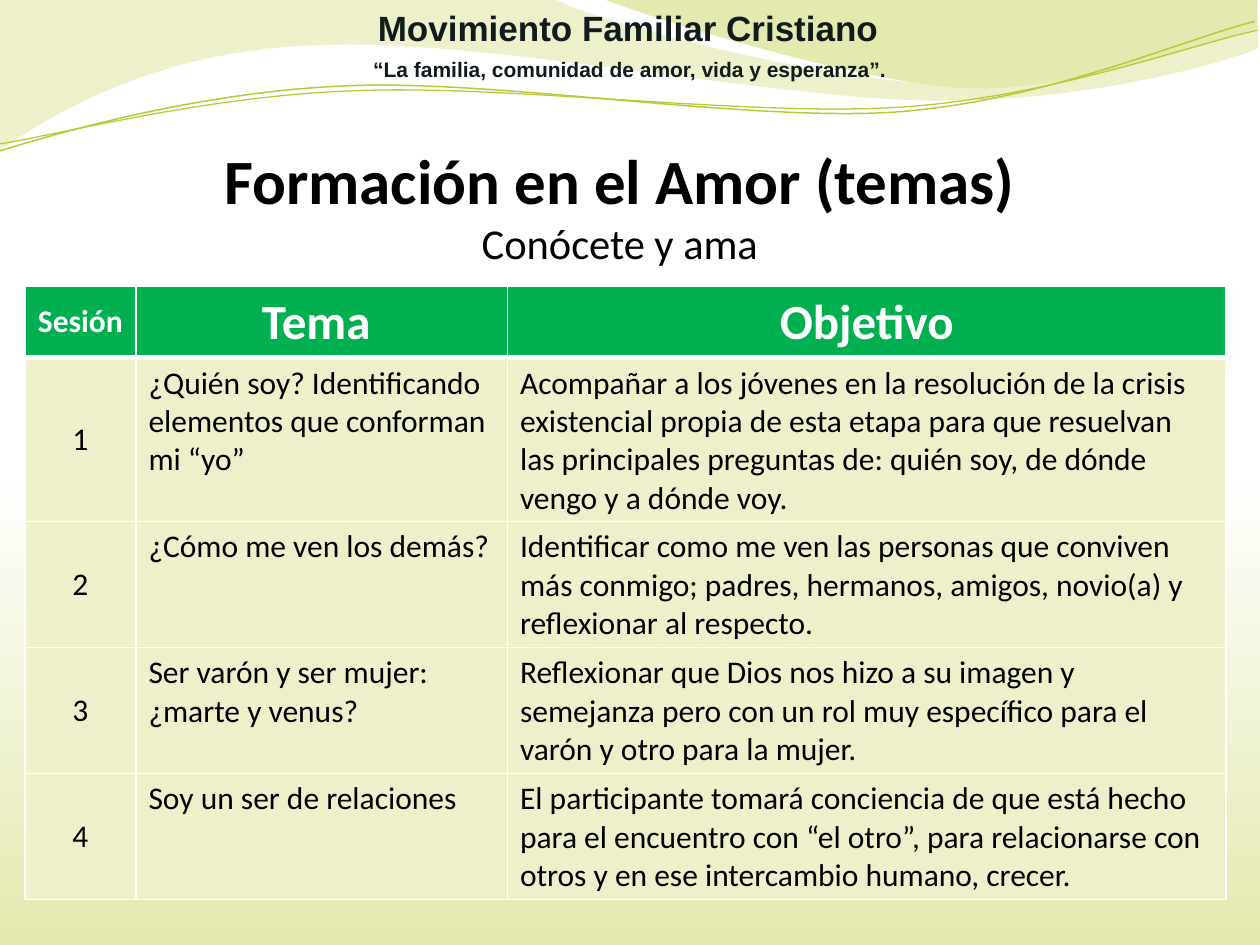
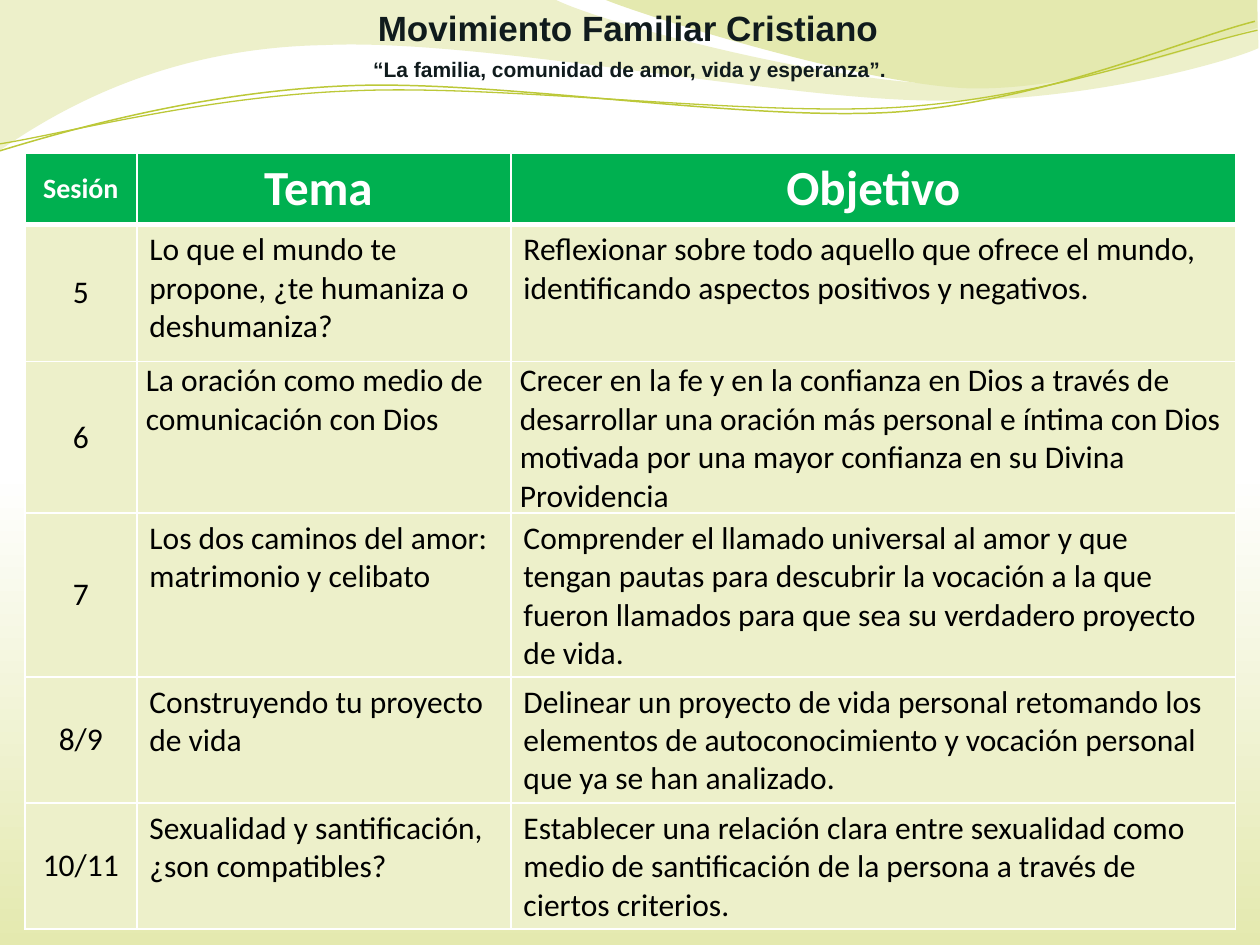
from dataclasses import dataclass

from lxml import etree
from pptx import Presentation
from pptx.dml.color import RGBColor
from pptx.enum.shapes import MSO_SHAPE
from pptx.enum.text import MSO_ANCHOR, PP_ALIGN
from pptx.oxml.ns import qn
from pptx.util import Cm, Pt

RECT = MSO_SHAPE.RECTANGLE
CENTER, LEFT = PP_ALIGN.CENTER, PP_ALIGN.LEFT
MIDDLE, TOP = MSO_ANCHOR.MIDDLE, MSO_ANCHOR.TOP

WHITE, BLACK, INK = "FFFFFF", "000000", "101B1D"
GREEN, PALE, LIME, OLIVE = "00B050", "EDF0CA", "E4E9AF", "BCC838"
BODY_FONT, BANNER_FONT = "Calibri", "Arial"
PAGE_WIDTH, PAGE_HEIGHT = 25.4, 19.05

Point = tuple[float, float]


@dataclass(frozen=True)
class Wave:
    """Outline in cm: a segment of one point is a line, of three a Bézier curve."""
    start: Point
    segments: list[tuple[Point, ...]]
    fill: str | None = None
    line_width: float = 0


@dataclass(frozen=True)
class Banner:
    text: str
    left: float
    top: float
    width: float
    height: float
    size: float
    wrap: bool


@dataclass(frozen=True)
class Session:
    number: str
    topic: str
    goal: str
    tight: bool = False


@dataclass(frozen=True)
class Program:
    top: float
    height: float
    columns: list[float]
    rows: list[float]
    session_size: float
    sessions: list[Session]


WAVES = [
    Wave((0, 0), [
        ((11.15, -0.03),),
        ((12.07, 0.46), (16.81, 1.7), (19.23, 1.7)),
        ((21.62, 1.7), (24.28, 0.69), (25.35, 0.23)),
        ((25.37, 0.97),),
        ((24.92, 1.19), (22.05, 2.06), (18.9, 2.03)),
        ((15.77, 2.03), (9.68, 0.76), (6.53, 0.91)),
        ((3.28, 0.97), (1.14, 2.24), (-0.03, 3.05)),
    ], fill=PALE),
    Wave((12.14, -0.03), [
        ((12.9, 0.3), (17.3, 1.68), (19.48, 1.78)),
        ((21.69, 1.85), (24.38, 0.86), (25.35, 0.56)),
        ((25.35, 0),),
    ], fill=LIME),
    Wave((-0.03, 3.05), [
        ((1.22, 2.67), (3.99, 1.85), (7.01, 1.73)),
        ((10.03, 1.6), (15.01, 2.46), (18.06, 2.26)),
        ((21.11, 2.03), (23.8, 0.81), (25.3, 0.43)),
    ], line_width=0.85),
    Wave((0, 2.9), [
        ((1.19, 2.72), (4.14, 1.93), (7.16, 1.83)),
        ((10.21, 1.7), (15.14, 2.36), (18.16, 2.16)),
        ((21.18, 1.96), (23.85, 0.94), (25.35, 0.61)),
    ], line_width=0.75),
]

BANNERS = [
    Banner("Movimiento Familiar Cristiano", 7.33, 0, 10.67, 1.12, 20, False),
    Banner("“La familia, comunidad de amor, vida y esperanza”.",
           4.65, 1.02, 16.1, 0.76, 12, True),
]

HEADINGS = ["Sesión", "Tema ", "Objetivo"]

FIRST_SESSIONS = Program(5.77, 12.55, [2.24, 7.49, 14.48], [1.04] * 5, 18, [
    Session("1", "¿Quién soy? Identificando elementos que conforman mi “yo”",
            "Acompañar a los jóvenes en la resolución de la crisis existencial propia "
            "de esta etapa para que resuelvan las principales preguntas de: quién soy, "
            "de dónde vengo y a dónde voy."),
    Session("2", "¿Cómo me ven los demás?",
            "Identificar como me ven las personas que conviven más conmigo; padres, "
            "hermanos, amigos, novio(a) y reflexionar al respecto."),
    Session("3", "Ser varón y ser mujer: ¿marte y venus?",
            "Reflexionar que Dios nos hizo a su imagen y semejanza pero con un rol muy "
            "específico para el varón y otro para la mujer."),
    Session("4", "Soy un ser de relaciones",
            "El participante tomará conciencia de que está hecho para el encuentro con "
            "“el otro”, para relacionarse con otros y en ese intercambio humano, crecer."),
])

LAST_SESSIONS = Program(3.08, 15.65, [2.26, 7.54, 14.61],
                        [0.99, 2.77, 2.59, 3, 2.18, 2.18], 16, [
    Session("5", "Lo que el mundo te propone, ¿te humaniza o deshumaniza?",
            "Reflexionar sobre todo aquello que ofrece el mundo, identificando aspectos "
            "positivos y negativos."),
    Session("6", "La oración como medio de comunicación con Dios",
            "Crecer en la fe y en la confianza en Dios a través de desarrollar una "
            "oración más personal e íntima con Dios motivada por una mayor confianza "
            "en su Divina Providencia", tight=True),
    Session("7", "Los dos caminos del amor: matrimonio y celibato",
            "Comprender el llamado universal al amor y que tengan pautas para descubrir "
            "la vocación a la que fueron llamados para que sea su verdadero proyecto "
            "de vida."),
    Session("8/9", "Construyendo tu proyecto de vida",
            "Delinear un proyecto de vida personal retomando los elementos de "
            "autoconocimiento y vocación personal que ya se han analizado."),
    Session("10/11", "Sexualidad y santificación, ¿son compatibles?",
            "Establecer una relación clara entre sexualidad como medio de santificación "
            "de la persona a través de ciertos criterios."),
])


def rgb(value: str) -> RGBColor:
    return RGBColor.from_string(value)


def add_run(p, text: str, size: float, color: str, bold=False, font=BODY_FONT) -> None:
    r = p.add_run()
    r.text = text
    r.font.name, r.font.size, r.font.bold = font, Pt(size), bold
    r.font.color.rgb = rgb(color)


def add_backdrop(s) -> None:
    sp = s.shapes.add_shape(RECT, 0, 0, Cm(PAGE_WIDTH), Cm(PAGE_HEIGHT))
    sp.shadow.inherit = False
    sp.line.fill.background()
    sp.fill.gradient()
    sp.fill.gradient_angle = 90
    for stop, color, position in zip(sp.fill.gradient_stops, (LIME, WHITE), (0, 0.5)):
        stop.color.rgb = rgb(color)
        stop.position = position


def bend_segments(sp, segments: list[tuple[Point, ...]]) -> None:
    """Turn the straight segments that have control points into Bézier curves."""
    lines = list(sp._element.iter(qn("a:lnTo")))
    for line, segment in zip(lines, segments):
        if len(segment) == 1:
            continue
        curve = etree.Element(qn("a:cubicBezTo"))
        for x, y in segment:
            etree.SubElement(curve, qn("a:pt"), x=str(Cm(x) - sp.left),
                             y=str(Cm(y) - sp.top))
        line.getparent().replace(line, curve)


def add_wave(s, wave: Wave) -> None:
    x, y = wave.start
    builder = s.shapes.build_freeform(Cm(x), Cm(y))
    ends = [(Cm(x), Cm(y)) for *_, (x, y) in wave.segments]
    builder.add_line_segments(ends, close=wave.fill is not None)
    sp = builder.convert_to_shape()
    bend_segments(sp, wave.segments)
    sp.shadow.inherit = False
    if wave.fill:
        sp.fill.solid()
        sp.fill.fore_color.rgb = rgb(wave.fill)
        sp.line.fill.background()
    else:
        sp.fill.background()
        sp.line.color.rgb = rgb(OLIVE)
        sp.line.width = Pt(wave.line_width)


def add_text_box(s, left: float, top: float, width: float, height: float, wrap=True):
    """Add a centred text box and return its first paragraph."""
    tf = s.shapes.add_textbox(Cm(left), Cm(top), Cm(width), Cm(height)).text_frame
    tf.word_wrap = wrap
    p = tf.paragraphs[0]
    p.alignment = CENTER
    return p


def add_page(prs):
    """Add a slide with the shared backdrop, waves and banner."""
    s = prs.slides.add_slide(prs.slide_layouts[6])
    add_backdrop(s)
    for wave in WAVES:
        add_wave(s, wave)
    for b in BANNERS:
        p = add_text_box(s, b.left, b.top, b.width, b.height, b.wrap)
        add_run(p, b.text, b.size, INK, True, BANNER_FONT)
    return s


def add_title(s, title: str, subtitle: str) -> None:
    p = add_text_box(s, 1.7, 2.72, 21.59, 1.6)
    add_run(p, title, 36, BLACK, True)
    p.add_line_break()
    add_run(p, subtitle, 24.3, BLACK)


def set_borders(cell, top: float, bottom: float) -> None:
    tc_pr = cell._tc.get_or_add_tcPr()
    for side, width in (("L", 1), ("R", 1), ("T", top), ("B", bottom)):
        ln = etree.SubElement(tc_pr, qn(f"a:ln{side}"), w=str(Pt(width)))
        fill = etree.SubElement(ln, qn("a:solidFill"))
        etree.SubElement(fill, qn("a:srgbClr"), val=WHITE)


def fill_cell(cell, text: str, size: float, row: int, centered: bool) -> None:
    header = row == 0
    set_borders(cell, 3 if row == 1 else 1, 3 if header else 1)
    cell.fill.solid()
    cell.fill.fore_color.rgb = rgb(GREEN if header else PALE)
    cell.vertical_anchor = MIDDLE if centered else TOP
    p = cell.text_frame.paragraphs[0]
    p.alignment = CENTER if centered else LEFT
    add_run(p, text, size, WHITE if header else BLACK, header)


def add_program(s, program: Program) -> None:
    frame = s.shapes.add_table(len(program.rows), len(program.columns), Cm(0.5),
                               Cm(program.top), Cm(sum(program.columns)),
                               Cm(program.height))
    table = frame.table
    table.horz_banding = False
    for column, width in zip(table.columns, program.columns):
        column.width = Cm(width)
    for row, height in zip(table.rows, program.rows):
        row.height = Cm(height)
    frame.height = Cm(program.height)

    for col, heading in enumerate(HEADINGS):
        size = 28 if col else program.session_size
        fill_cell(table.cell(0, col), heading, size, 0, True)
    for row, session in enumerate(program.sessions, 1):
        for col, text in enumerate((session.number, session.topic, session.goal)):
            cell = table.cell(row, col)
            fill_cell(cell, text, 18, row, col == 0)
            if session.tight and col:
                cell.margin_left = cell.margin_right = Cm(0.18)
                cell.margin_top = cell.margin_bottom = 0


def main() -> None:
    prs = Presentation()
    prs.slide_width, prs.slide_height = Cm(PAGE_WIDTH), Cm(PAGE_HEIGHT)

    s = add_page(prs)
    add_title(s, "Formación en el Amor (temas)", "Conócete y ama")
    add_program(s, FIRST_SESSIONS)

    s = add_page(prs)
    add_program(s, LAST_SESSIONS)

    prs.save("out.pptx")


if __name__ == "__main__":
    main()
